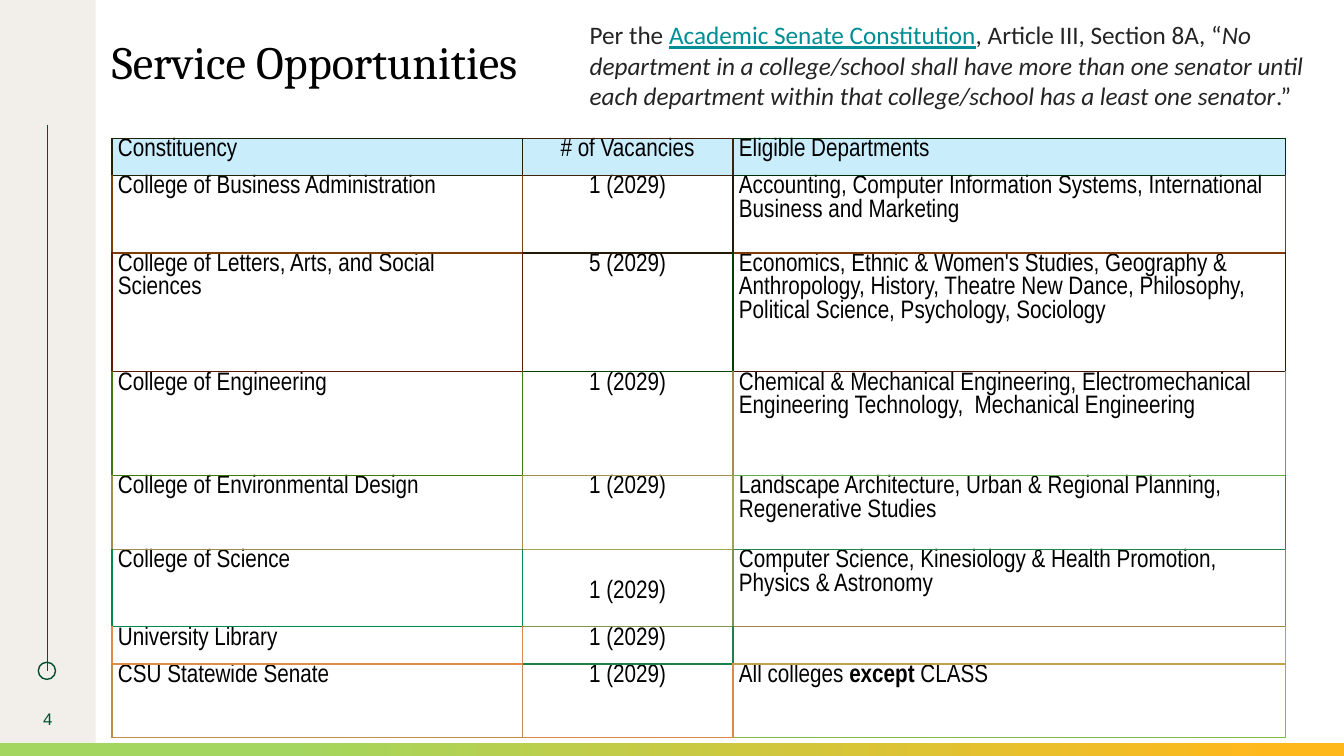
"""Build the Service Opportunities slide with its table of senate vacancies."""
from dataclasses import dataclass
from typing import Optional

from lxml import etree
from pptx import Presentation
from pptx import util as u
from pptx.dml.color import RGBColor
from pptx.enum import shapes, text
from pptx.oxml.ns import qn

WIDTH, HEIGHT = u.Inches(13.33), u.Inches(7.5)
GREEN, BLACK, INK, TEAL = "005030", "000000", "242424", "008E95"
COLUMNS = (30.53, 15.68, 41.1)
CENTER, LEFT = text.PP_ALIGN.CENTER, text.PP_ALIGN.LEFT


@dataclass(frozen=True)
class Box:
    """A place on the slide, in percent of its width and height."""
    left: float
    top: float
    width: float
    height: float

    def place(self) -> tuple[int, int, int, int]:
        """Return left, top, width and height as lengths."""
        return across(self.left), down(self.top), across(self.width), down(self.height)


@dataclass(frozen=True)
class Span:
    """A stretch of text in one style."""
    words: str
    color: str = BLACK
    bold: bool = False
    italic: bool = False
    underline: bool = False


@dataclass(frozen=True)
class Vacancy:
    """One table row: its height share, three texts and the edge colour of each cell."""
    height: float
    constituency: str
    seats: str
    departments: tuple[Span, ...]
    edges: tuple[str, str, str]
    fill: Optional[str] = None


VACANCIES = (
    Vacancy(4.93, "Constituency", "# of Vacancies", (Span("Eligible Departments"),),
            ("201F07", "402307", "002C07"), "CAEDFB"),
    Vacancy(10.27, "College of Business Administration", "1 (2029)",
            (Span("Accounting, Computer Information Systems, International Business and Marketing"),),
            ("803E07", "201A07", "803A07")),
    Vacancy(15.73, "College of Letters, Arts, and Social Sciences", "5 (2029)",
            (Span("Economics, Ethnic & Women's Studies, Geography & Anthropology, History, "
                  "Theatre New Dance, Philosophy, Political Science, Psychology, Sociology"),),
            ("601807", "003D07", "401507")),
    Vacancy(13.73, "College of Engineering", "1 (2029)",
            (Span("Chemical & Mechanical Engineering, Electromechanical Engineering Technology, "
                  " Mechanical Engineering"),),
            ("407709", "A0904A", "60AF4A")),
    Vacancy(9.73, "College of Environmental Design", "1 (2029)",
            (Span("Landscape Architecture, Urban & Regional Planning, Regenerative Studies"),),
            ("A08E4A", "A0A44A", "20884A")),
    Vacancy(10.27, "College of Science", "\v1 (2029)",
            (Span("Computer Science, Kinesiology & Health Promotion,  Physics & Astronomy"),),
            ("00894A", "80974A", "A0814A")),
    Vacancy(4.93, "University Library", "1 (2029)", (),
            ("E08D4A", "20804A", "C0A24A")),
    Vacancy(9.73, "CSU Statewide Senate", "1 (2029)",
            (Span("All colleges "), Span("except", bold=True), Span(" CLASS")),
            ("C08E4A", "E08A4A", "80BC4A")),
)
QUOTE = (
    Span("Per the ", INK),
    Span("Academic Senate Constitution", TEAL, underline=True),
    Span(", Article III, Section 8A, “", INK),
    Span("No department in a college/school shall have more than one senator until "
         "each department within that college/school has a least one senator", INK, italic=True),
    Span(".”", INK),
)


def across(percent: float) -> int:
    """Turn a share of the slide's width into a length."""
    return round(WIDTH * percent / 100)


def down(percent: float) -> int:
    """Turn a share of the slide's height into a length."""
    return round(HEIGHT * percent / 100)


def color(value: str) -> RGBColor:
    """Read a hex colour."""
    return RGBColor.from_string(value)


def write(frame, spans: tuple[Span, ...], font: str, size: float, align=LEFT,
          anchor=text.MSO_ANCHOR.TOP, side: float = 0) -> None:
    """Fill a text frame with one paragraph of styled spans."""
    frame.word_wrap = True
    frame.vertical_anchor = anchor
    frame.margin_left = frame.margin_right = u.Inches(side)
    frame.margin_top = frame.margin_bottom = 0
    paragraph = frame.paragraphs[0]
    paragraph.alignment = align
    for span in spans:
        done = len(paragraph.runs)
        if done:
            paragraph.add_run().text = span.words
        else:
            paragraph.text = span.words
        for run in paragraph.runs[done:]:
            run.font.name, run.font.size = font, u.Pt(size)
            run.font.color.rgb = color(span.color)
            run.font.bold, run.font.italic = span.bold, span.italic
            run.font.underline = span.underline


def add_panel(slide, box: Box, kind=shapes.MSO_SHAPE.RECTANGLE,
              fill: Optional[str] = None, line: Optional[str] = None):
    """Add a flat shape with an optional fill and outline."""
    panel = slide.shapes.add_shape(kind, *box.place())
    panel.shadow.inherit = False
    if fill:
        panel.fill.solid()
        panel.fill.fore_color.rgb = color(fill)
    else:
        panel.fill.background()
    if line:
        panel.line.color.rgb = color(line)
        panel.line.width = u.Pt(1)
    else:
        panel.line.fill.background()
    return panel


def add_frame(slide, box: Box):
    """Add a text box and return its text frame."""
    return slide.shapes.add_textbox(*box.place()).text_frame


def add_decor(slide) -> None:
    """Draw the side band, its marker line and the bottom bar."""
    add_panel(slide, Box(0, 0, 7.12, 100), fill="F2EEE9")
    marker = slide.shapes.add_connector(shapes.MSO_CONNECTOR.STRAIGHT, across(3.53), down(16.53),
                                        across(3.53), down(88.8))
    marker.line.color.rgb = color(GREEN)
    marker.line.width = u.Pt(1)
    etree.SubElement(marker._element.spPr, qn("a:effectLst"))
    add_panel(slide, Box(2.85, 87.6, 1.28, 2.27), shapes.MSO_SHAPE.OVAL, line=GREEN)
    bar = add_panel(slide, Box(0, 98.27, 100, 1.73))
    bar.fill.gradient()
    bar.fill.gradient_angle = 180
    for stop, (position, shade) in zip(bar.fill.gradient_stops, ((0.05, "FFB81C"), (0.79, "A3D65E"))):
        stop.position = position
        stop.color.rgb = color(shade)


def set_borders(cell, left: str, right: str, top: str, bottom: str) -> None:
    """Give each side of a cell a one-point line."""
    properties = cell._tc.get_or_add_tcPr()
    for side, shade in zip("LRTB", (left, right, top, bottom)):
        edge = etree.SubElement(properties, qn(f"a:ln{side}"), w=str(u.Pt(1)))
        solid = etree.SubElement(edge, qn("a:solidFill"))
        etree.SubElement(solid, qn("a:srgbClr"), val=shade)


def add_vacancies(slide, box: Box) -> None:
    """Draw the table; a cell shares its left and top edges with its neighbours."""
    table = slide.shapes.add_table(len(VACANCIES), len(COLUMNS), *box.place()).table
    table.first_row = table.horz_banding = False
    for column, share in zip(table.columns, COLUMNS):
        column.width = across(share)
    for r, vacancy in enumerate(VACANCIES):
        table.rows[r].height = down(vacancy.height)
        above = VACANCIES[max(r - 1, 0)].edges
        contents = ((Span(vacancy.constituency),), (Span(vacancy.seats),), vacancy.departments)
        for c, spans in enumerate(contents):
            cell, edge = table.cell(r, c), vacancy.edges[c]
            set_borders(cell, vacancy.edges[max(c - 1, 0)], edge, above[c], edge)
            if vacancy.fill:
                cell.fill.solid()
                cell.fill.fore_color.rgb = color(vacancy.fill)
            else:
                cell.fill.background()
            write(cell.text_frame, spans, "Arial Narrow", 18, CENTER if c == 1 else LEFT)
            cell.margin_left = cell.margin_right = u.Inches(0.06)
            cell.margin_top = cell.margin_bottom = 0


def main() -> None:
    """Build and save the slide."""
    deck = Presentation()
    deck.slide_width, deck.slide_height = WIDTH, HEIGHT
    slide = deck.slides.add_slide(deck.slide_layouts[6])
    add_decor(slide)
    title = add_frame(slide, Box(8.33, 5.2, 67.88, 6.67))
    write(title, (Span("Service Opportunities"),), "Cambria", 33)
    title.paragraphs[0].line_spacing = 0.9
    middle = text.MSO_ANCHOR.MIDDLE
    write(add_frame(slide, Box(0, 92.4, 7.12, 5.33)), (Span("4", GREEN),), "Arial", 12, CENTER, middle)
    add_vacancies(slide, Box(8.33, 18.27, sum(COLUMNS), sum(v.height for v in VACANCIES)))
    quote = add_panel(slide, Box(43.13, 2.53, 56.87, 12.13), fill="FFFFFF")
    write(quote.text_frame, QUOTE, "Calibri", 18, LEFT, middle, 0.1)
    deck.save("out.pptx")


if __name__ == "__main__":
    main()
